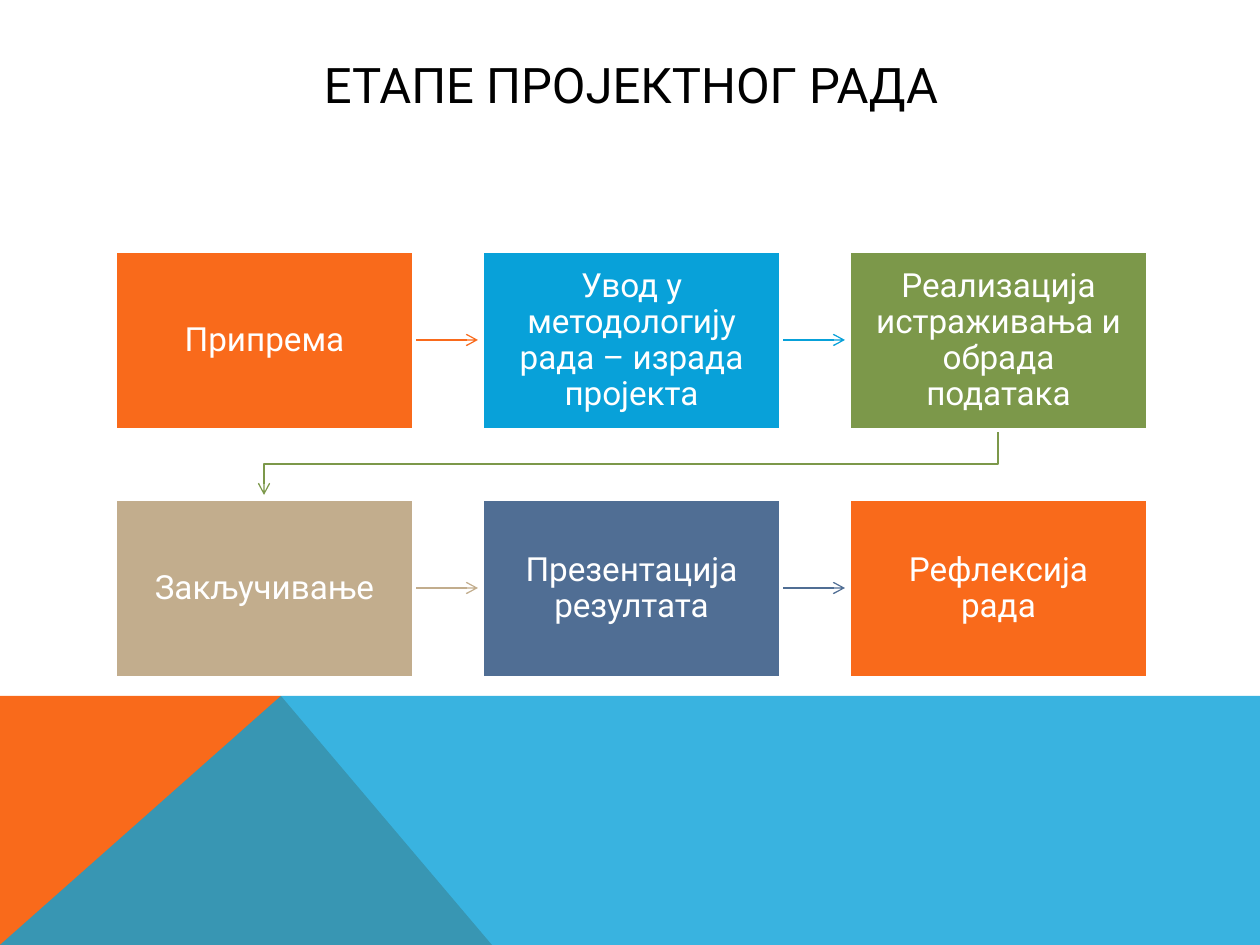
from lxml.etree import SubElement
from pptx import Presentation
from pptx.dml.color import RGBColor
from pptx.enum.shapes import MSO_CONNECTOR, MSO_SHAPE
from pptx.enum.text import MSO_ANCHOR, PP_ALIGN
from pptx.oxml.ns import qn
from pptx.util import Emu, Pt

PX = 914400 / 126
FONT = "Roboto"
ORANGE, BLUE, GREEN = "F96A1B", "08A1D9", "7C984A"
TAN, NAVY, WHITE, BLACK = "C2AD8D", "506E94", "FFFFFF", "000000"

STAGES = [
    ("Припрема", ORANGE),
    ("Увод у методологију рада – израда пројекта", BLUE),
    ("Реализација истраживања и обрада података", GREEN),
    ("Закључивање", TAN),
    ("Презентација резултата", NAVY),
    ("Рефлексија рада", ORANGE),
]
COLUMNS = 3
LEFT, TOP = 115, 251
BOX_WIDTH, BOX_HEIGHT = 299, 179
STEP_X, STEP_Y = 367, 248
TIP_GAP = 4


def px(value):
    return Emu(round(value * PX))


def color(hex_text):
    return RGBColor.from_string(hex_text)


def write(shape, text, size, text_color, inset):
    frame = shape.text_frame
    frame.word_wrap = True
    frame.vertical_anchor = MSO_ANCHOR.MIDDLE
    frame.margin_left = frame.margin_right = px(inset)
    frame.margin_top = frame.margin_bottom = px(inset)
    para = frame.paragraphs[0]
    para.alignment = PP_ALIGN.CENTER
    para.line_spacing = 0.9
    span = para.add_run()
    span.text = text
    span.font.name = FONT
    span.font.size = Pt(size)
    span.font.color.rgb = color(text_color)


def add_outline(page, points, closed):
    builder = page.shapes.build_freeform(*points[0], scale=PX)
    builder.add_line_segments(points[1:], close=closed)
    shape = builder.convert_to_shape()
    shape.shadow.inherit = False
    return shape


def add_band(page, points, fill, opacity=100):
    band = add_outline(page, points, True)
    band.fill.solid()
    band.fill.fore_color.rgb = color(fill)
    band.line.fill.background()
    if opacity < 100:
        tint = band._element.spPr.find(qn("a:solidFill"))[0]
        SubElement(tint, qn("a:alpha"), val=str(opacity * 1000))


def style_arrow(arrow, line_color):
    arrow.line.color.rgb = color(line_color)
    arrow.line.width = Pt(0.75)
    SubElement(arrow.line._get_or_add_ln(), qn("a:tailEnd"), type="arrow")


def add_straight_arrow(page, start_x, end_x, y, line_color):
    arrow = page.shapes.add_connector(
        MSO_CONNECTOR.STRAIGHT, px(start_x), px(y), px(end_x), px(y))
    style_arrow(arrow, line_color)
    SubElement(arrow._element.spPr, qn("a:effectLst"))


def add_bent_arrow(page, points, line_color):
    arrow = add_outline(page, points, False)
    arrow.fill.background()
    style_arrow(arrow, line_color)


def add_stage(page, x, y, text, fill):
    box = page.shapes.add_shape(
        MSO_SHAPE.RECTANGLE, px(x), px(y), px(BOX_WIDTH), px(BOX_HEIGHT))
    box.shadow.inherit = False
    box.fill.solid()
    box.fill.fore_color.rgb = color(fill)
    box.line.color.rgb = color(WHITE)
    box.line.width = Pt(2)
    write(box, text, 19, WHITE, 19)


def stage_corner(index):
    row, column = divmod(index, COLUMNS)
    return LEFT + column * STEP_X, TOP + row * STEP_Y


def add_link(page, index, line_color):
    """Arrow from one stage to the next, bent where the row ends."""
    x, y = stage_corner(index)
    next_x, next_y = stage_corner(index + 1)
    if y == next_y:
        add_straight_arrow(page, x + BOX_WIDTH, next_x - TIP_GAP,
                           y + BOX_HEIGHT // 2, line_color)
        return
    middle, next_middle = x + BOX_WIDTH // 2, next_x + BOX_WIDTH // 2
    bottom = y + BOX_HEIGHT
    bend = (bottom + next_y) // 2
    add_bent_arrow(page, [(middle, bottom), (middle, bend),
                          (next_middle, bend),
                          (next_middle, next_y - TIP_GAP)], line_color)


def main():
    deck = Presentation()
    deck.slide_width, deck.slide_height = px(1260), px(945)
    page = deck.slides.add_slide(deck.slide_layouts[6])

    # Coloured bands along the bottom
    add_band(page, [(0, 945), (0, 696), (281, 696), (492, 945)], ORANGE)
    add_band(page, [(0, 945), (281, 696), (1260, 696), (1260, 945)], BLUE, 80)

    # Title
    title = page.shapes.add_textbox(px(113), px(50), px(1036), px(76))
    write(title, "ЕТАПЕ ПРОЈЕКТНОГ РАДА", 28, BLACK, 6)

    # Stages and the arrows between them
    for index, (text, fill) in enumerate(STAGES):
        if index + 1 < len(STAGES):
            add_link(page, index, fill)
        add_stage(page, *stage_corner(index), text, fill)

    deck.save("out.pptx")


if __name__ == "__main__":
    main()
